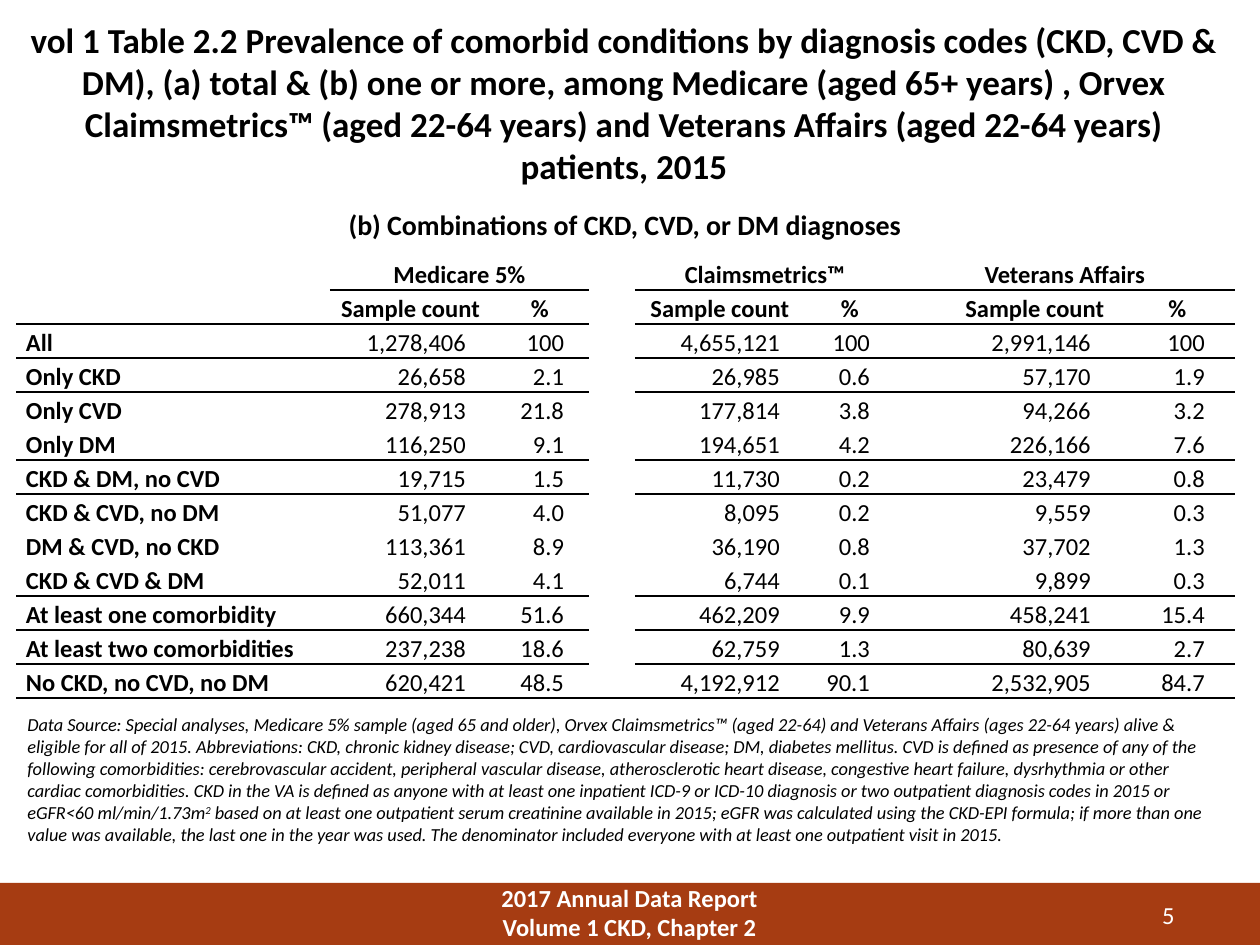
from lxml import etree
from pptx import Presentation
from pptx.dml.color import RGBColor
from pptx.enum.shapes import MSO_SHAPE
from pptx.enum.text import MSO_ANCHOR, PP_ALIGN
from pptx.oxml.ns import qn
from pptx.util import Emu, Pt

LEFT, CENTER, RIGHT = PP_ALIGN.LEFT, PP_ALIGN.CENTER, PP_ALIGN.RIGHT
TOP, MIDDLE = MSO_ANCHOR.TOP, MSO_ANCHOR.MIDDLE
RECTANGLE = MSO_SHAPE.RECTANGLE

EMU_PER_PX = 914400 / 126
FONT = "Calibri"
COLORS = {"text": "000000", "band": "A63C12", "band_text": "FFFFFF"}
PLAIN_TABLE_STYLE = "{2D5ABB26-0587-4C30-8999-92F81FD0307C}"

TITLE = (
    "vol 1 Table 2.2 Prevalence of comorbid conditions by diagnosis codes "
    "(CKD, CVD & DM), (a) total & (b) one or more, among Medicare (aged 65+ years) , "
    "Orvex Claimsmetrics™ (aged 22-64 years) and Veterans Affairs "
    "(aged 22-64 years) patients, 2015"
)
SUBTITLE = "(b) Combinations of CKD, CVD, or DM diagnoses"
NOTE = (
    "Data Source: Special analyses, Medicare 5% sample (aged 65 and older), "
    "Orvex Claimsmetrics™ (aged 22-64) and Veterans Affairs (ages 22-64 years) alive & "
    "eligible for all of 2015. Abbreviations: CKD, chronic kidney disease; CVD, "
    "cardiovascular disease; DM, diabetes mellitus. CVD is defined as presence of any "
    "of the following comorbidities: cerebrovascular accident, peripheral vascular "
    "disease, atherosclerotic heart disease, congestive heart failure, dysrhythmia or "
    "other cardiac comorbidities. CKD in the VA is defined as anyone with at least one "
    "inpatient ICD-9 or ICD-10 diagnosis or two outpatient diagnosis codes in 2015 or "
    "eGFR<60 ml/min/1.73m"
)
NOTE_END = (
    " based on at least one outpatient serum creatinine available in 2015; eGFR was "
    "calculated using the CKD-EPI formula; if more than one value was available, the "
    "last one in the year was used. The denominator included everyone with at least "
    "one outpatient visit in 2015."
)

COL_WIDTHS = [314, 161, 98, 46, 170, 90, 55, 170, 115]
ROW_HEIGHT = 34
COUNT_COLS = (1, 4, 7)
PERCENT_COLS = (2, 5, 8)
GAP_COL = 3
RIGHT_INSETS = {1: 25, 2: 25, 4: 25, 5: 25, 7: 29, 8: 30}
GROUPS = [(1, 2, "Medicare 5%"), (4, 5, "Claimsmetrics™"), (6, 8, "Veterans Affairs")]
RULED_ROWS = {0, 1, 2, 5, 9, 10, 11, 12}  # rows with a line below
ROWS = [
    ("All", "1,278,406", "100", "4,655,121", "100", "2,991,146", "100"),
    ("Only CKD", "26,658", "2.1", "26,985", "0.6", "57,170", "1.9"),
    ("Only CVD", "278,913", "21.8", "177,814", "3.8", "94,266", "3.2"),
    ("Only DM", "116,250", "9.1", "194,651", "4.2", "226,166", "7.6"),
    ("CKD & DM, no CVD", "19,715", "1.5", "11,730", "0.2", "23,479", "0.8"),
    ("CKD & CVD, no DM", "51,077", "4.0", "8,095", "0.2", "9,559", "0.3"),
    ("DM & CVD, no CKD", "113,361", "8.9", "36,190", "0.8", "37,702", "1.3"),
    ("CKD & CVD & DM", "52,011", "4.1", "6,744", "0.1", "9,899", "0.3"),
    ("At least one comorbidity", "660,344", "51.6", "462,209", "9.9", "458,241", "15.4"),
    ("At least two comorbidities", "237,238", "18.6", "62,759", "1.3", "80,639", "2.7"),
    ("No CKD, no CVD, no DM", "620,421", "48.5", "4,192,912", "90.1", "2,532,905", "84.7"),
]


def px(n):
    return Emu(round(n * EMU_PER_PX))


def rgb(name):
    return RGBColor.from_string(COLORS[name])


def style(p, size, align=LEFT, bold=False, italic=False, color="text"):
    p.alignment = align
    p.font.name = FONT
    p.font.size = Pt(size)
    p.font.bold = bold
    p.font.italic = italic
    p.font.color.rgb = rgb(color)


def add_text(s, box, text, size, anchor=TOP, **look):
    tf = s.shapes.add_textbox(*map(px, box)).text_frame
    tf.word_wrap = True
    tf.vertical_anchor = anchor
    tf.text = text
    for p in tf.paragraphs:
        style(p, size, **look)
    return tf


def add_note(s, box):
    p = add_text(s, box, NOTE, 10.5, italic=True).paragraphs[0]
    r = p.add_run()
    r.text = "2"
    r._r.get_or_add_rPr().set("baseline", "30000")
    p.add_run().text = NOTE_END


def add_footer(s, box):
    x, y, w, h = box
    band = s.shapes.add_shape(RECTANGLE, *map(px, box))
    band.shadow.inherit = False
    band.fill.solid()
    band.fill.fore_color.rgb = rgb("band")
    band.line.fill.background()
    add_text(s, (x + 451, y - 4, 357, h + 4), "2017 Annual Data Report\nVolume 1 CKD, Chapter 2",
             14, MIDDLE, align=CENTER, bold=True, color="band_text")
    add_text(s, (x + w - 199, y + 13, 126, 38), "5", 14, MIDDLE, align=RIGHT, color="band_text")


def add_rule(cell, side):
    """Draw a black 1 pt line on one side (lnT or lnB) of a cell."""
    ln = etree.SubElement(cell._tc.get_or_add_tcPr(), qn(f"a:{side}"), w=str(Pt(1)))
    fill = etree.SubElement(ln, qn("a:solidFill"))
    etree.SubElement(fill, qn("a:srgbClr"), val=COLORS["text"])


def has_rule_below(row, col):
    if row not in RULED_ROWS:
        return False
    if col == GAP_COL:
        return row == len(ROWS) + 1
    return not (row == 0 and col == 0)


def fill_cell(cell, row, col, text):
    is_number = row > 1 and col in RIGHT_INSETS
    cell.margin_left = px(10)
    cell.margin_right = px(RIGHT_INSETS[col] if is_number else 10)
    cell.margin_top = cell.margin_bottom = 0
    cell.vertical_anchor = MIDDLE
    if has_rule_below(row - 1, col):
        add_rule(cell, "lnT")
    if has_rule_below(row, col):
        add_rule(cell, "lnB")
    cell.fill.background()

    p = cell.text_frame.paragraphs[0]
    align = RIGHT if is_number else CENTER if row < 2 else LEFT
    style(p, 14, align, bold=not is_number)
    p.line_spacing = 1.15
    if text:
        p.add_run().text = text
    else:
        etree.SubElement(p._p, qn("a:endParaRPr"), sz="1400")


def table_texts():
    """Return the wording of the table, keyed by row and column."""
    texts = {(0, first): name for first, _, name in GROUPS}
    texts.update({(1, c): "Sample count" for c in COUNT_COLS})
    texts.update({(1, c): "%" for c in PERCENT_COLS})
    value_cols = [0, *sorted(COUNT_COLS + PERCENT_COLS)]
    for row, values in enumerate(ROWS, start=2):
        texts.update({(row, c): v for c, v in zip(value_cols, values)})
    return texts


def add_comorbidity_table(s, x, y):
    n_rows, n_cols = len(ROWS) + 2, len(COL_WIDTHS)
    table = s.shapes.add_table(n_rows, n_cols, px(x), px(y), px(sum(COL_WIDTHS)),
                               px(n_rows * ROW_HEIGHT)).table
    table.first_row = table.horz_banding = False
    table._tbl.tblPr.find(qn("a:tableStyleId")).text = PLAIN_TABLE_STYLE
    for col, width in zip(table.columns, COL_WIDTHS):
        col.width = px(width)
    texts = table_texts()
    for i, row in enumerate(table.rows):
        row.height = px(ROW_HEIGHT)
        for j in range(n_cols):
            fill_cell(table.cell(i, j), i, j, texts.get((i, j)))
    for first, last, _ in GROUPS:
        table.cell(0, first).merge(table.cell(0, last))


def main():
    prs = Presentation()
    prs.slide_width, prs.slide_height = px(1260), px(945)
    s = prs.slides.add_slide(prs.slide_layouts[6])
    add_footer(s, (0, 883, 1260, 62))
    add_text(s, (15, 12, 1218, 157), TITLE, 20, align=CENTER, bold=True)
    add_comorbidity_table(s, 16, 256)
    add_text(s, (286, 201, 678, 47), SUBTITLE, 16, align=CENTER, bold=True)
    add_note(s, (15, 707, 1218, 146))
    prs.save("out.pptx")


if __name__ == "__main__":
    main()
